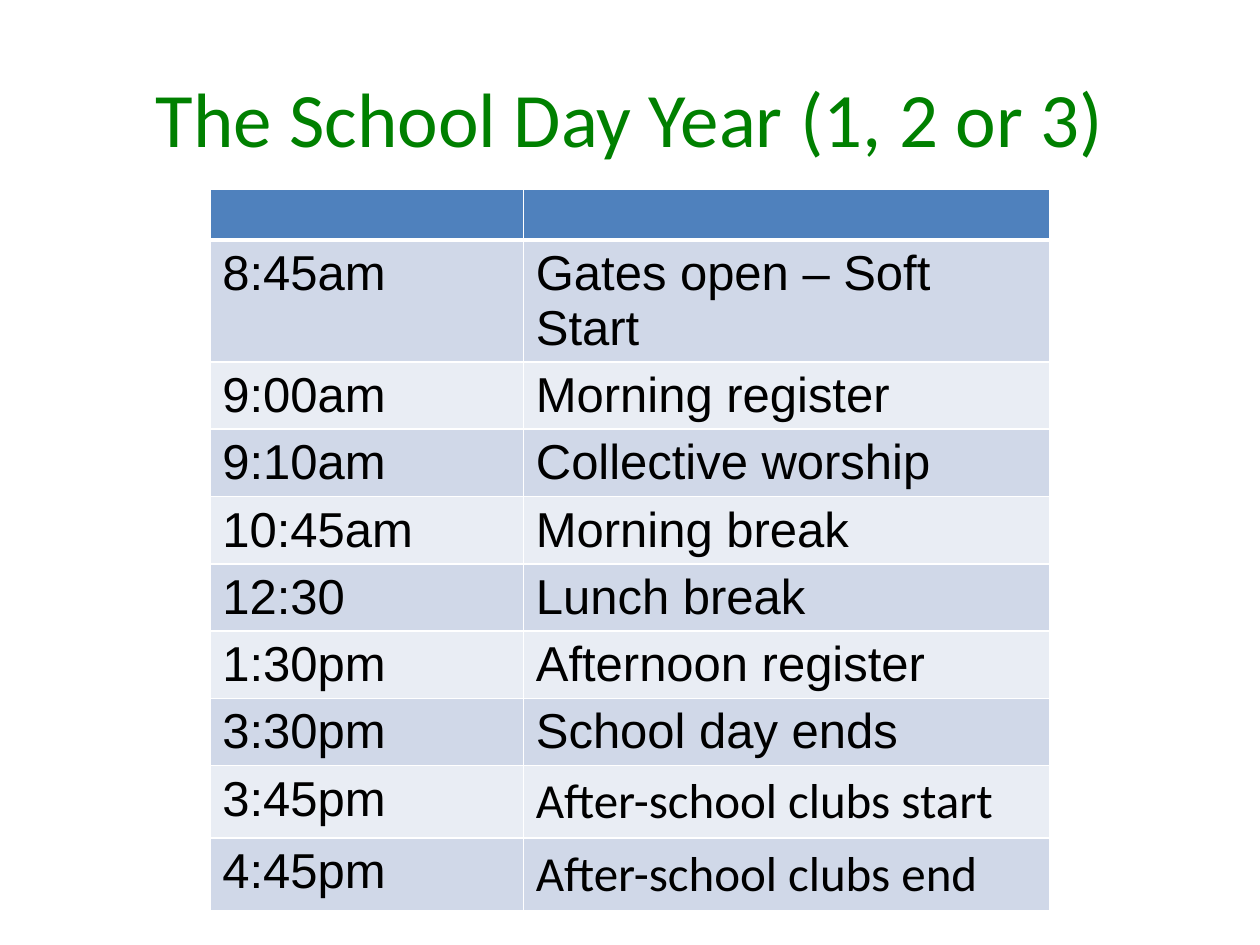
from dataclasses import dataclass

from lxml.etree import SubElement
from pptx import Presentation
from pptx.dml.color import RGBColor
from pptx.enum.text import MSO_ANCHOR, PP_ALIGN
from pptx.oxml.ns import qn
from pptx.util import Cm, Pt

HEADER_FILL = "4F81BD"
BAND_FILLS = ("D0D8E8", "E9EDF4")
BORDER_COLOR = "FFFFFF"
COLUMN_WIDTHS = (6.32, 10.62)
ROW_HEIGHT = 1.03


@dataclass
class Entry:
    time: str
    activity: str
    activity_font: str = "Arial"


ENTRIES = [
    Entry("8:45am", "Gates open – Soft Start"),
    Entry("9:00am", "Morning register"),
    Entry("9:10am", "Collective worship"),
    Entry("10:45am", "Morning break"),
    Entry("12:30", "Lunch break"),
    Entry("1:30pm", "Afternoon register"),
    Entry("3:30pm", "School day ends"),
    Entry("3:45pm", "After-school clubs start", "Calibri"),
    Entry("4:45pm", "After-school clubs end", "Calibri"),
]


def color(value: str) -> RGBColor:
    return RGBColor.from_string(value)


def format_text(text_frame, font_name: str, size: int, font_color: str) -> None:
    for paragraph in text_frame.paragraphs:
        for run in paragraph.runs:
            run.font.name = font_name
            run.font.size = Pt(size)
            run.font.color.rgb = color(font_color)


def style_cell(cell, fill: str, top: int = 1, bottom: int = 1) -> None:
    properties = cell._tc.get_or_add_tcPr()
    widths = {"a:lnL": 1, "a:lnR": 1, "a:lnT": top, "a:lnB": bottom}
    for tag, width in widths.items():
        line = SubElement(properties, qn(tag), w=str(Pt(width)))
        line_fill = SubElement(line, qn("a:solidFill"))
        SubElement(line_fill, qn("a:srgbClr"), val=BORDER_COLOR)
    cell.fill.solid()
    cell.fill.fore_color.rgb = color(fill)


def add_title(slide, text: str) -> None:
    title = slide.shapes.title
    title.left, title.top = Cm(1.27), Cm(0.76)
    title.width, title.height = Cm(22.86), Cm(3.18)
    text_frame = title.text_frame
    text_frame.text = text
    text_frame.vertical_anchor = MSO_ANCHOR.MIDDLE
    text_frame.paragraphs[0].alignment = PP_ALIGN.CENTER
    format_text(text_frame, "Calibri", 44, "008000")


def add_timetable(slide, entries: list[Entry]) -> None:
    row_count = len(entries) + 1
    table = slide.shapes.add_table(
        row_count, len(COLUMN_WIDTHS), Cm(4.23), Cm(3.81),
        Cm(sum(COLUMN_WIDTHS)), Cm(ROW_HEIGHT * row_count),
    ).table
    for column, width in zip(table.columns, COLUMN_WIDTHS):
        column.width = Cm(width)
    for cell in table.rows[0].cells:
        style_cell(cell, HEADER_FILL, bottom=3)
    for index, entry in enumerate(entries):
        texts = ((entry.time, "Arial"), (entry.activity, entry.activity_font))
        for cell, (text, font_name) in zip(table.rows[index + 1].cells, texts):
            cell.text_frame.text = text
            format_text(cell.text_frame, font_name, 28, "000000")
            style_cell(cell, BAND_FILLS[index % 2], top=3 if index == 0 else 1)


def main() -> None:
    presentation = Presentation()
    presentation.slide_width = Cm(25.4)
    presentation.slide_height = Cm(19.05)
    slide = presentation.slides.add_slide(presentation.slide_layouts[5])
    add_title(slide, "The School Day Year (1, 2 or 3)")
    add_timetable(slide, ENTRIES)
    presentation.save("out.pptx")


if __name__ == "__main__":
    main()
